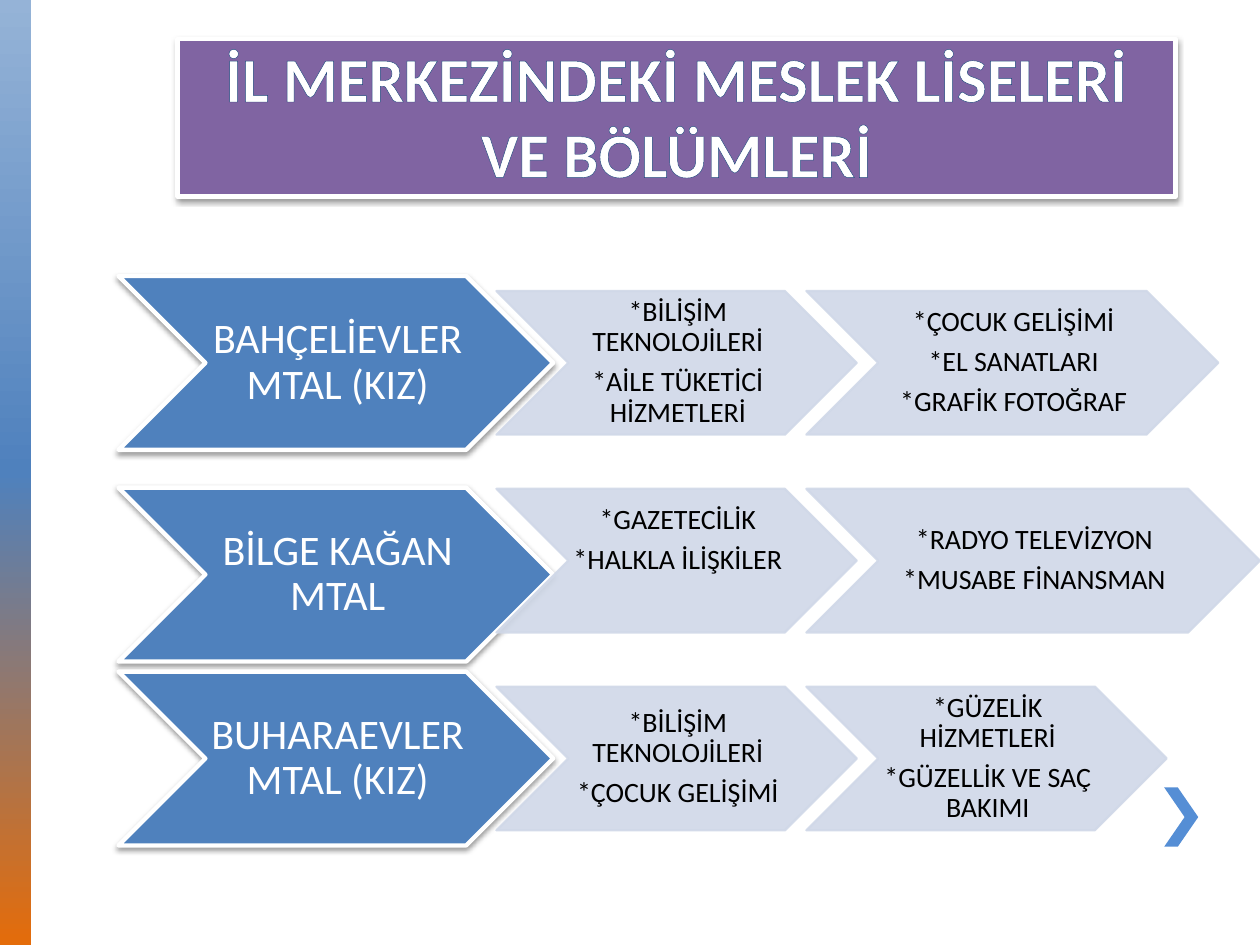
from copy import deepcopy

from lxml.etree import SubElement
from pptx import Presentation
from pptx.dml.color import RGBColor
from pptx.enum.shapes import MSO_SHAPE as Kind
from pptx.enum.text import MSO_ANCHOR as Anchor, MSO_AUTO_SIZE as Fit, PP_ALIGN as Align
from pptx.oxml.ns import qn
from pptx.util import Inches, Pt

WIDE, HIGH = 10, 7.5
COLS = (0.94, 3.94, 6.4)
TOP, STEP = 2.88, 1.57  # middle of the first row, distance between rows
SCHOOL = (3.45, 1.38)
DEPT = (2.86, 1.14)

# school, its drop below the row's middle, width of the last chevron, departments
ROWS = [
    ("BAHÇELİEVLER MTAL (KIZ)", 0, 3.27, [
        ["*BİLİŞİM TEKNOLOJİLERİ", "*AİLE TÜKETİCİ HİZMETLERİ"],
        ["*ÇOCUK GELİŞİMİ", "*EL SANATLARI", "*GRAFİK FOTOĞRAF"]]),
    ("BİLGE KAĞAN MTAL", 0.11, 3.6, [
        ["*GAZETECİLİK", "*HALKLA İLİŞKİLER"],
        ["*RADYO TELEVİZYON", "*MUSABE FİNANSMAN"]]),
    ("BUHARAEVLER MTAL (KIZ)", 0, DEPT[0], [
        ["*BİLİŞİM TEKNOLOJİLERİ", "*ÇOCUK GELİŞİMİ"],
        ["*GÜZELİK HİZMETLERİ", "*GÜZELLİK VE SAÇ BAKIMI"]]),
]
LIFTED = "*GAZETECİLİK"  # the list that sits above its chevron's middle


def rgb(code):
    return RGBColor.from_string(code)


def paint(shape, fill, line=None, width=0):
    shape.fill.solid()
    shape.fill.fore_color.rgb = rgb(fill)
    if line:
        shape.line.color.rgb = rgb(line)
        shape.line.width = Pt(width)
    else:
        shape.line.fill.background()


def fade(shape, share):
    """Make fill and line partly transparent."""
    for tone in shape._element.spPr.iter(qn("a:srgbClr")):
        SubElement(tone, qn("a:alpha"), val=str(share * 1000))


def shade(shape):
    """Give the shape a soft shadow below it."""
    shape.shadow.inherit = False
    effects = shape._element.spPr.find(qn("a:effectLst"))
    outer = SubElement(effects, qn("a:outerShdw"), blurRad=str(Pt(3.1)),
                       dist=str(Pt(1.6)), dir="5400000", rotWithShape="0")
    tone = SubElement(outer, qn("a:srgbClr"), val="000000")
    SubElement(tone, qn("a:alpha"), val="38000")


def style(para, size, color):
    para.alignment = Align.CENTER
    font = para.font
    font.name, font.size = "Calibri", Pt(size)
    font.color.rgb = rgb(color)


def add_shape(slide, kind, x, y, w, h):
    shape = slide.shapes.add_shape(kind, *map(Inches, (x, y, w, h)))
    shape.shadow.inherit = False
    return shape


def add_arrow(slide, x, mid, size, lines, points, color, pad, foot=0):
    """Add a chevron centred on mid; foot lifts its text."""
    w, h = size
    arrow = add_shape(slide, Kind.CHEVRON, x, mid - h / 2, w, h)
    frame = arrow.text_frame
    frame.word_wrap = True
    frame.vertical_anchor = Anchor.MIDDLE
    frame.margin_left, frame.margin_right = Inches(pad), 0
    frame.margin_top, frame.margin_bottom = Inches(0.01), Inches(0.01 + foot)
    frame.text = "\n".join(lines)
    for para in frame.paragraphs:
        style(para, points, color)
        para.line_spacing = 0.9
        para.space_after = Pt(points * 0.35)
    return arrow


def add_row(slide, mid, school, drop, last, lists):
    arrow = add_arrow(slide, COLS[0], mid + drop, SCHOOL, [school], 24, "FFFFFF", 0.03)
    paint(arrow, "4F81BD", "FFFFFF", 2.5)
    shade(arrow)
    for x, w, lines in zip(COLS[1:], (DEPT[0], last), lists):
        foot = 0.32 if lines[0] == LIFTED else 0
        arrow = add_arrow(slide, x, mid, (w, DEPT[1]), lines, 16, "000000", 0.02, foot)
        paint(arrow, "D0D8E8", "D0D8E8", 1.25)
        fade(arrow, 90)


def add_bar(slide):
    bar = add_shape(slide, Kind.RECTANGLE, 0, 0, WIDE / 40, HIGH)
    bar.line.fill.background()
    bar.fill.gradient()
    bar.fill.gradient_angle = 270
    stops = bar._element.spPr.find(qn("a:gradFill")).find(qn("a:gsLst"))
    stops.insert(1, deepcopy(stops[0]))
    tones = ("95B3D7", "4F81BD", "E46C0A")
    for stop, place, tone in zip(bar.fill.gradient_stops, (0, 0.5, 1), tones):
        stop.position = place
        stop.color.rgb = rgb(tone)


def add_mark(slide):
    mark = add_shape(slide, Kind.CHEVRON, 9.24, 6.25, 0.27, 0.47)
    mark.adjustments[0] = 0.6
    paint(mark, "558ED5")


def set_title(slide, text):
    title = slide.shapes.title
    title.left, title.top, title.width, title.height = map(Inches, (1.41, 0.31, 7.92, 1.25))
    paint(title, "8064A2", "FFFFFF", 2.5)
    shade(title)
    frame = title.text_frame
    frame.text = text
    frame.auto_size = Fit.NONE
    frame.vertical_anchor = Anchor.BOTTOM
    para = frame.paragraphs[0]
    style(para, 36, "FFFFFF")
    para.font.bold = True
    props = para.runs[0]._r.get_or_add_rPr()
    edge = SubElement(props, qn("a:ln"), w=str(Pt(1)))
    SubElement(SubElement(edge, qn("a:solidFill")), qn("a:srgbClr"), val="1F497D")


def main():
    deck = Presentation()
    deck.slide_width, deck.slide_height = Inches(WIDE), Inches(HIGH)
    slide = deck.slides.add_slide(deck.slide_layouts[5])
    add_bar(slide)
    add_mark(slide)
    set_title(slide, "İL MERKEZİNDEKİ MESLEK LİSELERİ VE BÖLÜMLERİ")
    for i, row in enumerate(ROWS):
        add_row(slide, TOP + i * STEP, *row)
    deck.save("out.pptx")


if __name__ == "__main__":
    main()
